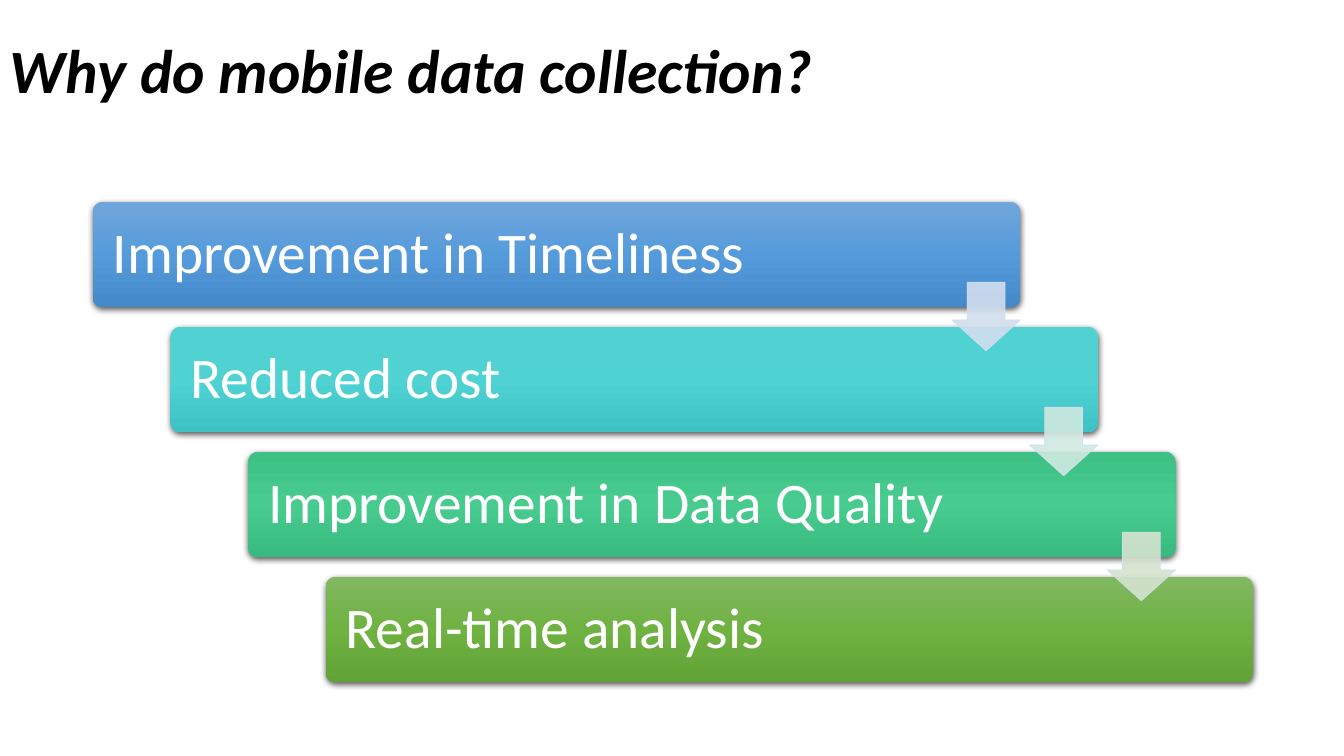
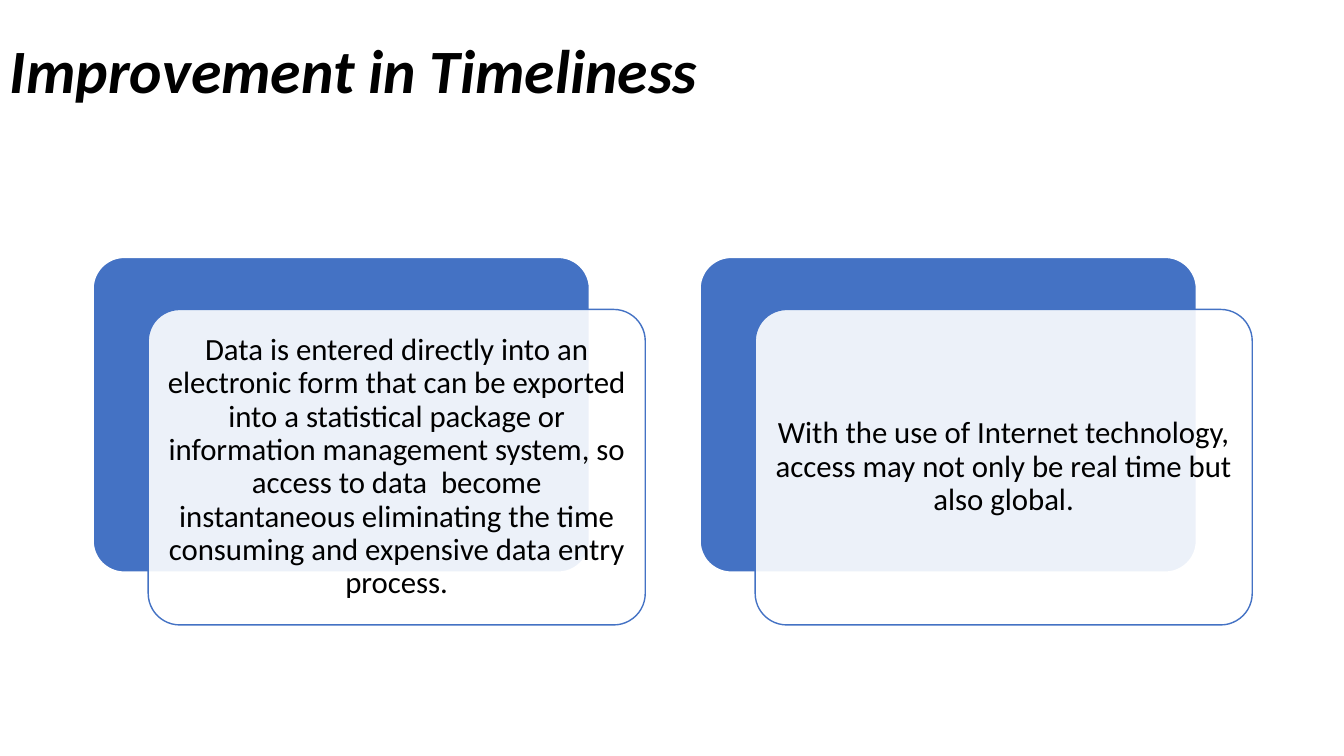
from copy import deepcopy

from lxml import etree
from pptx import Presentation
from pptx.dml.color import RGBColor
from pptx.enum.shapes import MSO_SHAPE as Shape
from pptx.enum.text import MSO_ANCHOR as Anchor, PP_ALIGN as Align
from pptx.oxml.ns import qn
from pptx.util import Inches, Pt

FONT = "Calibri"
BLACK = RGBColor(0x00, 0x00, 0x00)
WHITE = RGBColor(0xFF, 0xFF, 0xFF)
BLUE = RGBColor(0x44, 0x72, 0xC4)
ARROW_LINE = RGBColor(0xD2, 0xDE, 0xEF)
ARROW_FILLS = [ARROW_LINE, RGBColor(0xD0, 0xEA, 0xE1), RGBColor(0xD5, 0xE3, 0xCF)]

# Each step: text, then its gradient from top to bottom
STEPS = [
    ("Improvement in Timeliness",
     [RGBColor(0x71, 0xA6, 0xDB), RGBColor(0x55, 0x9B, 0xDB), RGBColor(0x44, 0x8A, 0xCA)]),
    ("Reduced cost",
     [RGBColor(0x50, 0xD2, 0xD3), RGBColor(0x4E, 0xD2, 0xD3), RGBColor(0x3E, 0xC2, 0xC3)]),
    ("Improvement in Data Quality",
     [RGBColor(0x3E, 0xC1, 0x85), RGBColor(0x47, 0xCB, 0x8E), RGBColor(0x39, 0xBB, 0x7F)]),
    ("Real-time analysis",
     [RGBColor(0x81, 0xB8, 0x61), RGBColor(0x6F, 0xB2, 0x42), RGBColor(0x62, 0xA3, 0x36)]),
]
CARDS = [
    "Data is entered directly into an electronic form that can be exported into a "
    "statistical package or information management system, so access to data  become "
    "instantaneous eliminating the time consuming and expensive data entry process.",
    "With the use of Internet technology, access may not only be real time but also global.",
]

LEFT = 0.92
STEP_TOP, STEP_WIDTH, STEP_HEIGHT = 2, 9.2, 1.05
STEP_RIGHT, STEP_DOWN = 0.77, 1.24
ARROW_SIZE, ARROW_DROP = 0.68, 0.8
CARD_TOP, CARD_WIDTH, CARD_HEIGHT, CARD_PITCH = 2.55, 4.93, 3.13, 6.02
FRONT_RIGHT, FRONT_DOWN = 0.55, 0.52


def write_text(shape, text, size, color, align=Align.LEFT, inset=None):
    frame = shape.text_frame
    frame.text = text
    frame.word_wrap = True
    frame.vertical_anchor = Anchor.MIDDLE
    if inset is not None:
        frame.margin_left = frame.margin_right = Inches(inset)
        frame.margin_top = frame.margin_bottom = Inches(inset)
    para = frame.paragraphs[0]
    para.alignment = align
    para.line_spacing = 0.9
    font = para.runs[0].font
    font.name, font.size, font.color.rgb = FONT, Pt(size), color
    return font


def add_title_page(deck, title):
    page = deck.slides.add_slide(deck.slide_layouts[6])
    box = page.shapes.add_textbox(0, 0, Inches(11.5), Inches(1.45))
    font = write_text(box, title, 44, BLACK)
    font.bold = font.italic = True
    return page


def add_plain_shape(page, kind, left, top, width, height, adjustments):
    shape = page.shapes.add_shape(
        kind, Inches(left), Inches(top), Inches(width), Inches(height))
    shape.shadow.inherit = False
    for index, value in enumerate(adjustments):
        shape.adjustments[index] = value
    return shape


def paint(shape, fill, line, line_width):
    shape.fill.solid()
    shape.fill.fore_color.rgb = fill
    shape.line.color.rgb = line
    shape.line.width = Pt(line_width)


def set_alpha(color_element, percent):
    etree.SubElement(color_element, qn("a:alpha"), val=str(percent * 1000))


def set_fill_alpha(shape, percent):
    properties = shape.element.spPr
    set_alpha(properties.find(qn("a:solidFill")).find(qn("a:srgbClr")), percent)


def paint_gradient(shape, colors):
    """Spread the colours evenly from top to bottom."""
    fill = shape.fill
    fill.gradient()
    fill.gradient_angle = 270
    stop_list = shape.element.spPr.find(qn("a:gradFill")).find(qn("a:gsLst"))
    while len(stop_list) < len(colors):
        stop_list.append(deepcopy(stop_list[0]))
    for index, (stop, color) in enumerate(zip(fill.gradient_stops, colors)):
        stop.position = index / (len(colors) - 1)
        stop.color.rgb = color


def add_drop_shadow(shape):
    effects = shape.element.spPr.find(qn("a:effectLst"))
    shadow = etree.SubElement(
        effects, qn("a:outerShdw"), blurRad=str(Pt(4.5)), dist=str(Pt(1.5)),
        dir="5400000", algn="ctr", rotWithShape="0")
    set_alpha(etree.SubElement(shadow, qn("a:srgbClr"), val=str(BLACK)), 63)


def add_step(page, index, text, colors):
    bar = add_plain_shape(
        page, Shape.ROUNDED_RECTANGLE, LEFT + index * STEP_RIGHT,
        STEP_TOP + index * STEP_DOWN, STEP_WIDTH, STEP_HEIGHT, [0.1])
    paint_gradient(bar, colors)
    bar.line.fill.background()
    add_drop_shadow(bar)
    write_text(bar, text, 41, WHITE, inset=0.17)


def add_step_arrow(page, index, color):
    """Link a step to the next, flush with its right end."""
    arrow = add_plain_shape(
        page, Shape.DOWN_ARROW,
        LEFT + index * STEP_RIGHT + STEP_WIDTH - ARROW_SIZE,
        STEP_TOP + index * STEP_DOWN + ARROW_DROP,
        ARROW_SIZE, ARROW_SIZE, [0.55, 0.45])
    paint(arrow, color, ARROW_LINE, 0.5)
    set_fill_alpha(arrow, 90)


def add_card(page, index, text):
    """Add a translucent text card in front of an offset blue one."""
    left = LEFT + index * CARD_PITCH
    back = add_plain_shape(page, Shape.ROUNDED_RECTANGLE, left, CARD_TOP,
                           CARD_WIDTH, CARD_HEIGHT, [0.1])
    paint(back, BLUE, WHITE, 1.5)
    front = add_plain_shape(
        page, Shape.ROUNDED_RECTANGLE, left + FRONT_RIGHT, CARD_TOP + FRONT_DOWN,
        CARD_WIDTH, CARD_HEIGHT, [0.1])
    paint(front, WHITE, BLUE, 1)
    set_fill_alpha(front, 90)
    write_text(front, text, 22, BLACK, Align.CENTER, inset=0.09)


def main():
    deck = Presentation()
    deck.slide_width, deck.slide_height = Inches(13.33), Inches(7.5)

    reasons = add_title_page(deck, "Why do mobile data collection?")
    for index, (text, colors) in enumerate(STEPS):
        add_step(reasons, index, text, colors)
    for index, color in enumerate(ARROW_FILLS):
        add_step_arrow(reasons, index, color)

    timeliness = add_title_page(deck, "Improvement in Timeliness")
    for index, text in enumerate(CARDS):
        add_card(timeliness, index, text)

    deck.save("out.pptx")


if __name__ == "__main__":
    main()
